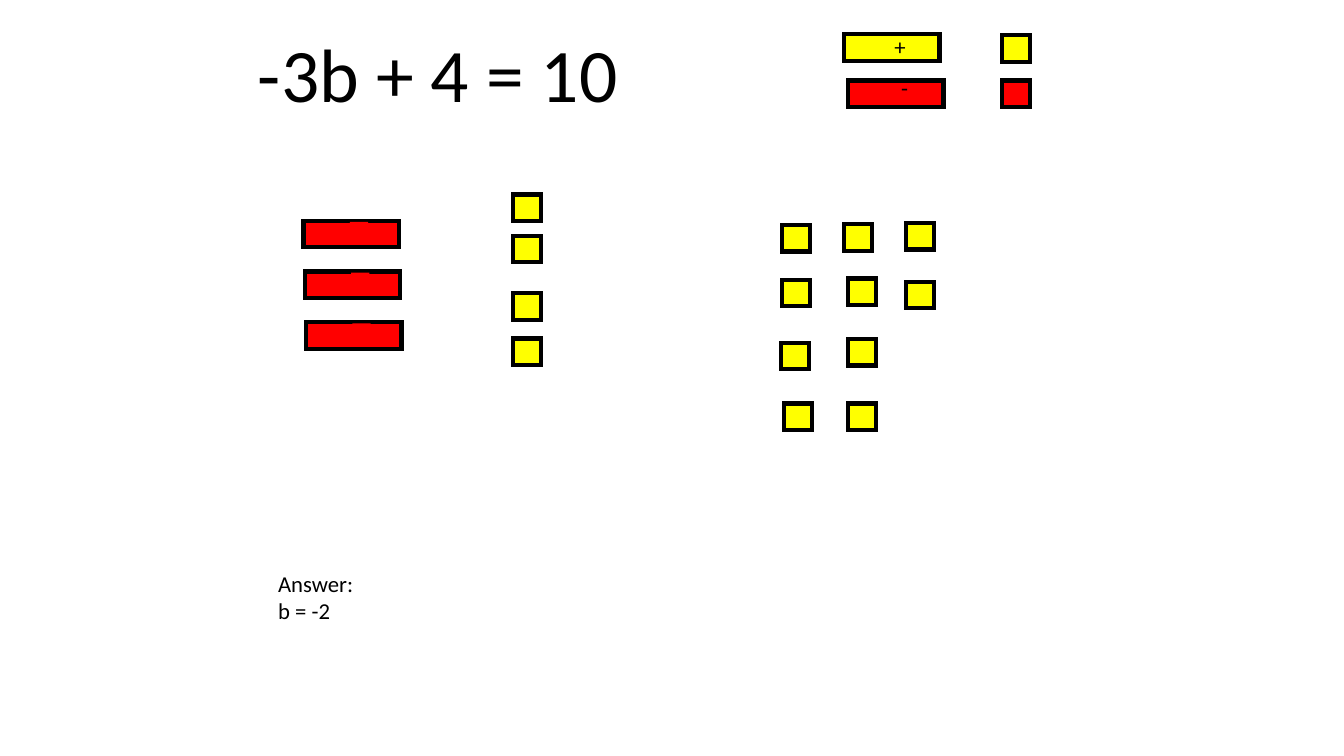
import lxml.etree
import pptx
import pptx.dml.color
import pptx.enum.shapes
import pptx.enum.text
import pptx.oxml.ns
import pptx.util

RED = pptx.dml.color.RGBColor(0xFF, 0x00, 0x00)
YELLOW = pptx.dml.color.RGBColor(0xFF, 0xFF, 0x00)
BLACK = pptx.dml.color.RGBColor(0x00, 0x00, 0x00)

# Tile sizes in cm
BAR_W, UNIT_W, TILE_H = 2.41, 0.7, 0.67


def cm_box(*lengths):
    return [pptx.util.Cm(length) for length in lengths]


def add_rect(s, x, y, w, h, fill, outlined=True):
    sp = s.shapes.add_shape(pptx.enum.shapes.MSO_SHAPE.RECTANGLE,
                            *cm_box(x, y, w, h))
    sp.shadow.inherit = False
    sp.fill.solid()
    sp.fill.fore_color.rgb = fill
    if outlined:
        sp.line.color.rgb = BLACK
        sp.line.width = pptx.util.Pt(3)
        # Square corners on the outline
        ln = sp.element.spPr.find(pptx.oxml.ns.qn("a:ln"))
        lxml.etree.SubElement(ln, pptx.oxml.ns.qn("a:miter"), lim="800000")
    else:
        sp.line.fill.background()


def add_bar(s, x, y, fill):
    add_rect(s, x, y, BAR_W, TILE_H, fill)


def add_unit(s, x, y, fill):
    add_rect(s, x, y, UNIT_W, TILE_H, fill)


def add_text(s, x, y, w, h, lines, size, wrap=True):
    tf = s.shapes.add_textbox(*cm_box(x, y, w, h)).text_frame
    tf.word_wrap = wrap
    tf.text = "\n".join(lines)
    for p in tf.paragraphs:
        p.font.size = pptx.util.Pt(size)
        p.font.name = "Calibri"
        p.font.color.rgb = BLACK
    return tf


def add_title(s, x, y, w, h):
    tf = add_text(s, x, y, w, h, ["-3b + 4 = 10"], 54)
    tf.vertical_anchor = pptx.enum.text.MSO_ANCHOR.BOTTOM
    tf.paragraphs[0].line_spacing = 0.9


def add_legend(s, x, y):
    # Bar offset, unit offset, colour, sign, sign offset from the bar, sign width
    rows = [
        (0.1, 1.17, 1.17, RED, "-", 1.09, -0.3, 0.69),
        (0, 0, 0.03, YELLOW, "+", 1.02, -0.17, 0.81),
    ]
    for dx, dy, unit_dy, fill, sign, sign_dx, sign_dy, sign_w in rows:
        bar_x, bar_y = x + dx, y + dy
        add_bar(s, bar_x, bar_y, fill)
        add_unit(s, x + 3.98, y + unit_dy, fill)
        add_text(s, bar_x + sign_dx, bar_y + sign_dy, sign_w, 0.94,
                 [sign], 16.2, wrap=False)


def add_left_side(s, x, y):
    # Three negative variable bars, each with a plain patch at its top edge
    for i in range(3):
        bar_x, bar_y = x + 0.03 * i, y + 0.66 + 1.28 * i
        add_bar(s, bar_x, bar_y, RED)
        add_rect(s, bar_x + 1.17, bar_y + 0.03, 0.46, 0.33, RED, outlined=False)
    # Four positive units
    for dy in (0, 1.04, 2.49, 3.63):
        add_unit(s, x + 5.28, y + dy, YELLOW)


def add_right_side(s, x, y):
    # Ten positive units, column by column
    columns = [
        [(0.02, 0.05), (0.02, 1.43), (0, 3.02), (0.07, 4.55)],
        [(1.58, 0.03), (1.68, 1.4), (1.68, 2.92), (1.69, 4.55)],
        [(3.14, 0), (3.14, 1.48)],
    ]
    for column in columns:
        for dx, dy in column:
            add_unit(s, x + dx, y + dy, YELLOW)


def add_answer(s, x, y, w, h):
    add_text(s, x, y, w, h, ["Answer:", "b = -2"], 16.2)


def main():
    prs = pptx.Presentation()
    prs.slide_width, prs.slide_height = cm_box(33.87, 19.05)
    s = prs.slides.add_slide(prs.slide_layouts[6])
    add_title(s, 6.25, 0.74, 21.89, 2.39)
    add_legend(s, 21.27, 0.86)
    add_left_side(s, 7.65, 4.9)
    add_right_side(s, 19.69, 5.62)
    add_answer(s, 6.76, 14.24, 4.11, 1.65)
    prs.save("out.pptx")


if __name__ == "__main__":
    main()
